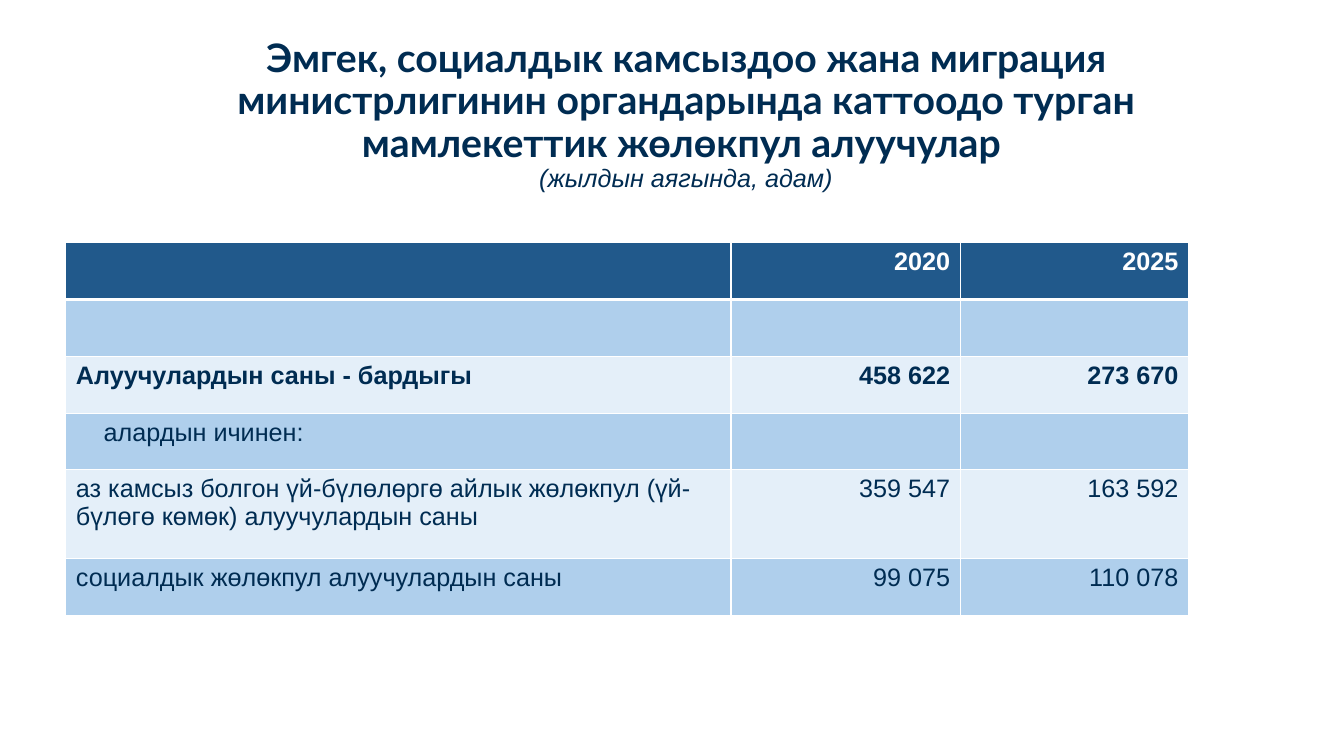
import pptx
import pptx.dml.color
import pptx.enum.text
import pptx.oxml
import pptx.oxml.ns
import pptx.util

Cm = pptx.util.Cm
RGBColor = pptx.dml.color.RGBColor
Align = pptx.enum.text.PP_ALIGN

# Content
TITLE = ("Эмгек, социалдык камсыздоо жана миграция министрлигинин органдарында "
         "каттоодо турган мамлекеттик жөлөкпул алуучулар ")
SUBTITLE = "(жылдын аягында, адам)"
ROWS = [
    ("", "2020", "2025"),
    ("", "", ""),
    ("Алуучулардын саны - бардыгы", "458 622", "273 670"),
    ("алардын ичинен:", "", ""),
    ("аз камсыз болгон үй-бүлөлөргө айлык жөлөкпул (үй-бүлөгө көмөк) "
     "алуучулардын саны", "359 547", "163 592"),
    ("социалдык жөлөкпул алуучулардын саны", "99 075", "110 078"),
]
TOTAL_ROW, INDENTED_ROW, TALL_ROW = 2, 3, 4

# Format
NAVY = RGBColor(0x00, 0x2C, 0x52)
HEADER_BLUE = RGBColor(0x21, 0x59, 0x8B)
BAND_BLUE = RGBColor(0xAF, 0xCF, 0xEC)
PALE_BLUE = RGBColor(0xE4, 0xEF, 0xF9)
WHITE = RGBColor(0xFF, 0xFF, 0xFF)
COLUMN_WIDTHS = [Cm(16.76), Cm(5.78), Cm(5.75)]
ROW_HEIGHT, TALL_HEIGHT = Cm(1.43), Cm(2.24)
INDENT = Cm(0.7)


def add_text(para, text, *, size=18, face="Arial", color=NAVY, bold=False, italic=False):
    span = para.add_run()
    span.text = text
    span.font.size = pptx.util.Pt(size)
    span.font.name = face
    span.font.color.rgb = color
    span.font.bold = bold
    span.font.italic = italic


def add_border(cell, side, points):
    cell._tc.get_or_add_tcPr().append(pptx.oxml.parse_xml(
        f'<a:ln{side} {pptx.oxml.ns.nsdecls("a")} w="{pptx.util.Pt(points)}">'
        f'<a:solidFill><a:srgbClr val="{WHITE}"/></a:solidFill></a:ln{side}>'))


deck = pptx.Presentation()
deck.slide_width, deck.slide_height = Cm(33.87), Cm(19.05)
page = deck.slides.add_slide(deck.slide_layouts[5])

# Title with its unit line
title = page.shapes.title
title.left, title.top, title.width, title.height = Cm(2.67), Cm(1.3), Cm(29.24), Cm(3.99)
frame = title.text_frame
frame.word_wrap = True
frame.auto_size = pptx.enum.text.MSO_AUTO_SIZE.NONE
frame.vertical_anchor = pptx.enum.text.MSO_ANCHOR.MIDDLE
frame.margin_bottom = Cm(0.89)
heading = frame.paragraphs[0]
heading.alignment = Align.CENTER
heading.line_spacing = 0.9
add_text(heading, TITLE, size=28, face="Lato", bold=True)
heading.add_line_break()
add_text(heading, SUBTITLE, italic=True)

# Table of recipients
heights = [TALL_HEIGHT if row == TALL_ROW else ROW_HEIGHT for row in range(len(ROWS))]
table = page.shapes.add_table(len(ROWS), len(COLUMN_WIDTHS), Cm(1.66), Cm(6.12),
                              sum(COLUMN_WIDTHS), sum(heights)).table
for column, width in zip(table.columns, COLUMN_WIDTHS):
    column.width = width
for line, height in zip(table.rows, heights):
    line.height = height

for row, values in enumerate(ROWS):
    header = row == 0
    fill = HEADER_BLUE if header else BAND_BLUE if row % 2 else PALE_BLUE
    for column, value in enumerate(values):
        cell = table.cell(row, column)
        for side, points in (("L", 1), ("R", 1), ("T", 3 if row == 1 else 1),
                             ("B", 3 if header else 1)):
            add_border(cell, side, points)
        cell.fill.solid()
        cell.fill.fore_color.rgb = fill
        if row == INDENTED_ROW and column == 0:
            cell.margin_left += INDENT
        para = cell.text_frame.paragraphs[0]
        para.alignment = Align.RIGHT if column else Align.LEFT
        if value:
            add_text(para, value, color=WHITE if header else NAVY,
                     bold=header or row == TOTAL_ROW)

deck.save("out.pptx")
